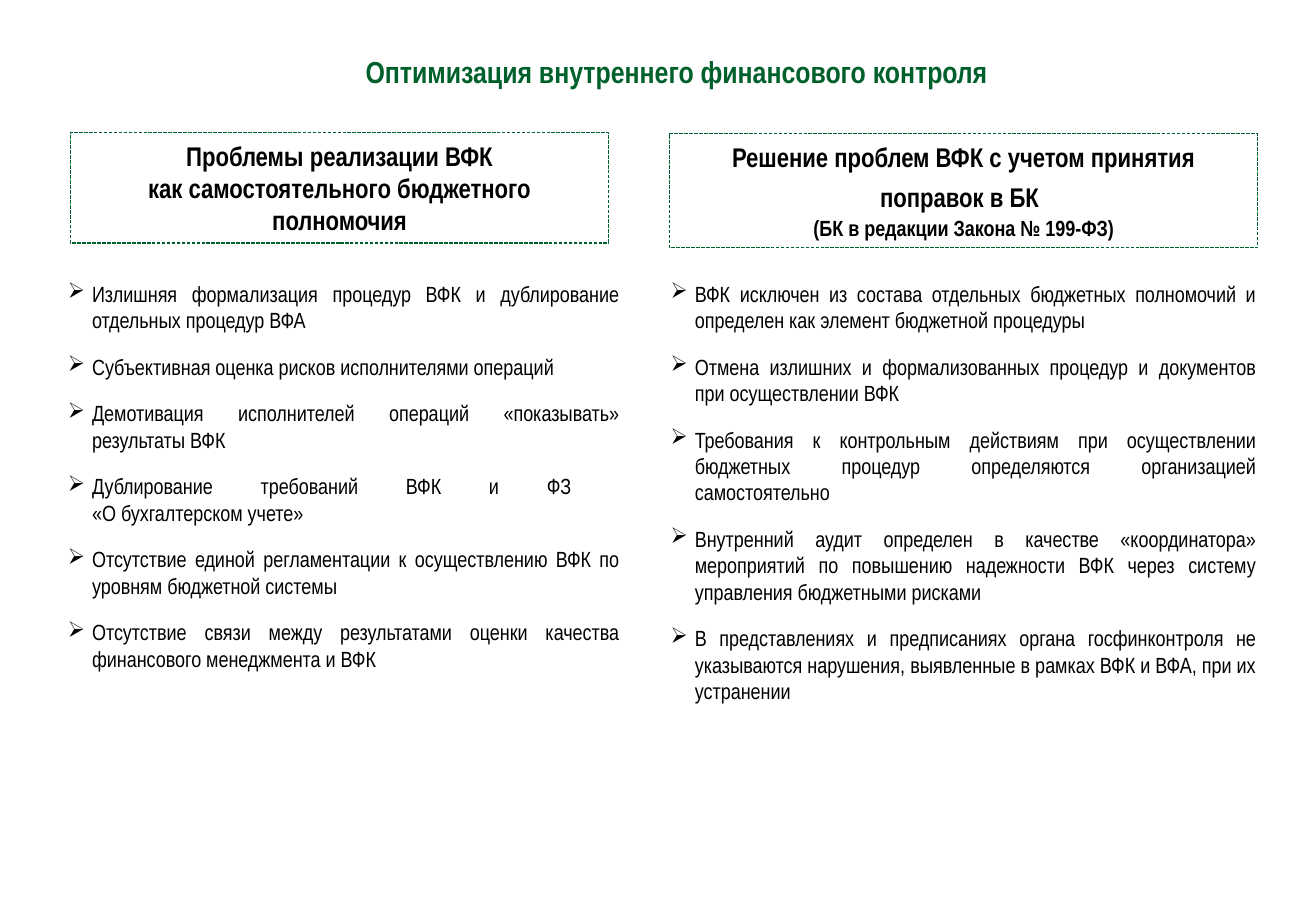
from copy import deepcopy

from lxml import etree
from pptx import Presentation
from pptx.dml.color import RGBColor
from pptx.enum import dml, shapes, text
from pptx.oxml.ns import qn
from pptx.util import Inches, Pt

COLORS = {"green": "00602B", "black": "000000"}
FONT = "Arial Narrow"
ALIGN = text.PP_ALIGN

TITLE = "Оптимизация внутреннего финансового контроля"
COLUMNS = [
    {
        "heading": [
            ("Проблемы реализации ВФК\nкак самостоятельного бюджетного полномочия", 16),
        ],
        "heading_box": (0.58, 1.09, 4.43, 0.91),
        "items": [
            "Излишняя формализация процедур ВФК и дублирование отдельных процедур ВФА",
            "Субъективная оценка рисков исполнителями операций",
            "Демотивация исполнителей операций «показывать» результаты ВФК",
            "Дублирование требований ВФК и ФЗ \n«О бухгалтерском учете»",
            "Отсутствие единой регламентации к осуществлению ВФК по уровням бюджетной системы",
            "Отсутствие связи между результатами оценки качества финансового менеджмента и ВФК",
        ],
        "items_box": (0.46, 2.26, 4.73, 4.01),
    },
    {
        "heading": [
            ("Решение проблем ВФК с учетом принятия поправок в БК", 16),
            (" \n", 21),
            ("(БК в редакции Закона № 199-ФЗ)", 13),
        ],
        "heading_box": (5.51, 1.1, 4.84, 0.94),
        "items": [
            "ВФК исключен из состава отдельных бюджетных полномочий и определен "
            "как элемент бюджетной процедуры",
            "Отмена излишних и формализованных процедур и документов при осуществлении ВФК",
            "Требования к контрольным действиям при осуществлении бюджетных процедур "
            "определяются организацией самостоятельно",
            "Внутренний аудит определен в качестве «координатора» мероприятий по повышению "
            "надежности ВФК через систему управления бюджетными рисками",
            "В представлениях и предписаниях органа госфинконтроля не указываются нарушения, "
            "выявленные в рамках ВФК и ВФА, при их устранении",
        ],
        "items_box": (5.42, 2.26, 5.01, 4.27),
    },
]


def add_text(p, words, size, color="black", bold=False):
    """Add a run for each line, with equally formatted breaks between them."""
    for i, line in enumerate(words.split("\n")):
        if i:
            p.add_line_break()
            p._p[-1].append(deepcopy(r._r.rPr))
        if not line:
            continue
        r = p.add_run()
        r.text = line
        for name, value in {"name": FONT, "size": Pt(size), "bold": bold}.items():
            setattr(r.font, name, value)
        r.font.color.rgb = RGBColor.from_string(COLORS[color])


def add_text_box(s, box):
    tf = s.shapes.add_textbox(*map(Inches, box)).text_frame
    tf.word_wrap = True
    tf.auto_size = text.MSO_AUTO_SIZE.SHAPE_TO_FIT_TEXT
    return tf


def add_title(s, box):
    p = add_text_box(s, box).paragraphs[0]
    p.alignment = ALIGN.CENTER
    p.line_spacing = Pt(28)
    add_text(p, TITLE, 18, "green", True)


def add_heading(s, box, parts):
    sp = s.shapes.add_shape(shapes.MSO_SHAPE.RECTANGLE, *map(Inches, box))
    sp.shadow.inherit = False
    sp.fill.background()
    sp.line.color.rgb = RGBColor.from_string(COLORS["green"])
    sp.line.width = Pt(0.75)
    sp.line.dash_style = dml.MSO_LINE.SQUARE_DOT
    tf = sp.text_frame
    tf.word_wrap = True
    tf.auto_size = text.MSO_AUTO_SIZE.SHAPE_TO_FIT_TEXT
    tf.vertical_anchor = text.MSO_ANCHOR.MIDDLE
    p = tf.paragraphs[0]
    p.alignment = ALIGN.CENTER
    for words, size in parts:
        add_text(p, words, size, bold=True)


def add_bullets(s, box, items):
    tf = add_text_box(s, box)
    for i, item in enumerate(items):
        p = tf.add_paragraph() if i else tf.paragraphs[0]
        p.alignment = ALIGN.JUSTIFY
        p.level = 1
        p.space_after = Pt(12)
        pPr = p._p.get_or_add_pPr()
        pPr.set("marL", str(Inches(0.2)))
        pPr.set("indent", str(-Inches(0.2)))
        etree.SubElement(pPr, qn("a:buFont"), typeface="Wingdings")
        etree.SubElement(pPr, qn("a:buChar"), char="Ø")
        add_text(p, item, 13)


def main():
    prs = Presentation()
    prs.slide_width, prs.slide_height = Inches(10.83), Inches(7.5)
    s = prs.slides.add_slide(prs.slide_layouts[6])
    add_title(s, (1.56, 0.3, 8.02, 0.46))
    for column in COLUMNS:
        add_heading(s, column["heading_box"], column["heading"])
        add_bullets(s, column["items_box"], column["items"])
    prs.save("out.pptx")


if __name__ == "__main__":
    main()
